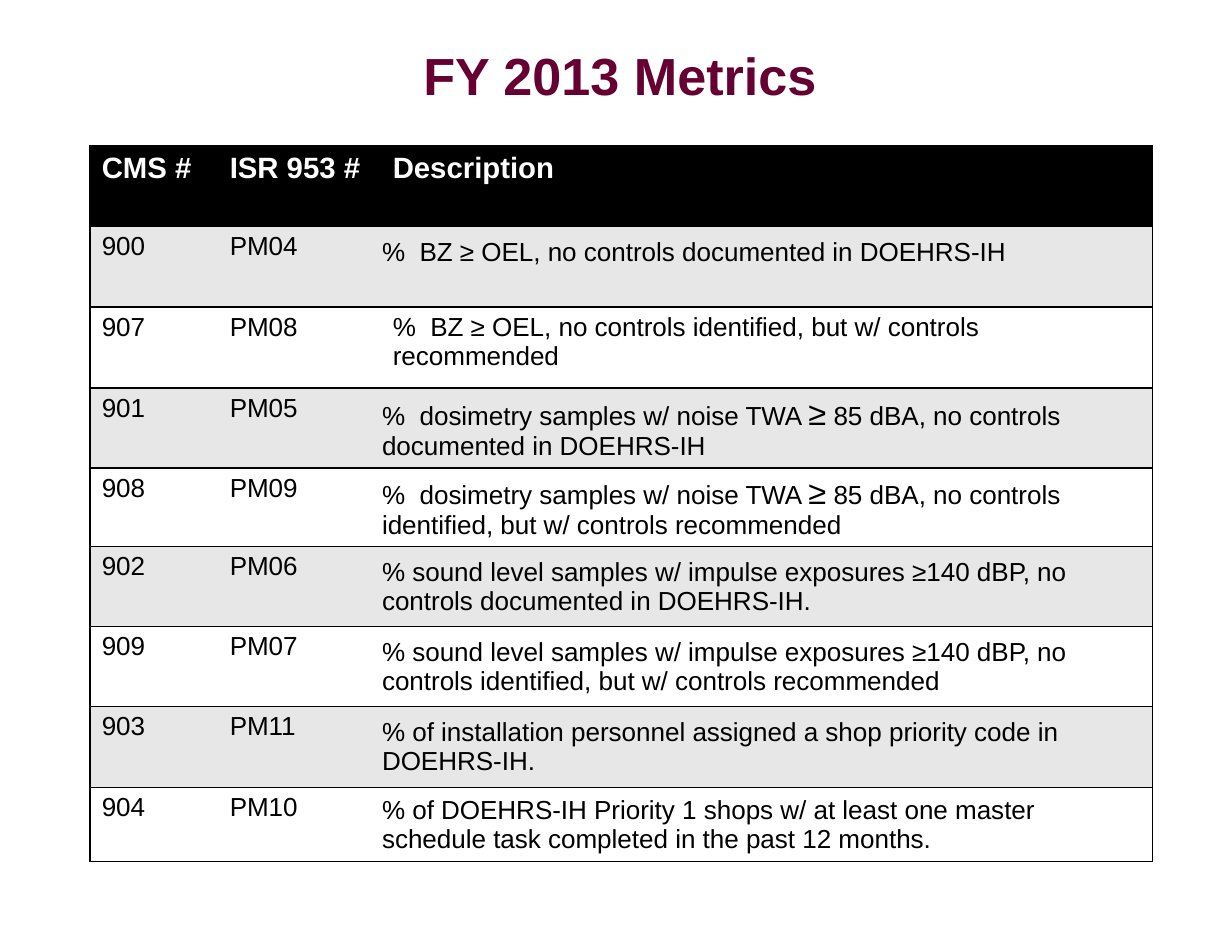
"""Build the FY 2013 Metrics slide: a title above a table of measures."""
from lxml.etree import SubElement
from pptx import Presentation
from pptx.dml.color import RGBColor
from pptx.enum.text import MSO_ANCHOR as Anchor, PP_ALIGN as Align
from pptx.oxml.ns import qn
from pptx.util import Inches, Pt

TITLE = "FY 2013 Metrics"
HEADINGS = ("CMS #", "ISR 953 #", "Description")
METRICS = [
    ("900", "PM04", ("% ", "BZ ≥ OEL, no controls documented in DOEHRS-IH")),
    ("907", "PM08", ("% ", "BZ ≥ OEL, no controls identified, but w/ controls recommended")),
    ("901", "PM05", ("% ", "dosimetry samples w/ noise TWA ", "≥",
                     " 85 dBA, no controls documented in DOEHRS-IH")),
    ("908", "PM09", ("% ", "dosimetry samples w/ noise TWA ", "≥",
                     " 85 dBA, no controls identified, but w/ controls recommended")),
    ("902", "PM06", ("% sound level samples w/ impulse exposures ≥140 dBP, "
                     "no controls documented in DOEHRS-IH.",)),
    ("909", "PM07", ("% sound level samples w/ impulse exposures ≥140 dBP, "
                     "no controls identified, but w/ controls recommended",)),
    ("903", "PM11", ("% of installation personnel assigned a shop priority code in DOEHRS-IH.",)),
    ("904", "PM10", ("% of DOEHRS-IH Priority 1 shops w/ at least one master ", "\n",
                     "schedule task completed in the past 12 months.")),
]

MAROON = RGBColor(0x66, 0x00, 0x33)
BLACK = RGBColor(0x00, 0x00, 0x00)
WHITE = RGBColor(0xFF, 0xFF, 0xFF)
GRAY = RGBColor(0xE7, 0xE7, 0xE7)

PX = 914400 / 117.3
TITLE_BOX = (66, 34, 1108, 81)
TABLE_LEFT, TABLE_TOP = 90, 146
COLUMN_WIDTHS = (128, 163, 771)
ROW_HEIGHTS = (80, 81, 81, 80, 78, 80, 80, 81, 74)
MARGINS = {"margin_left": 1, "margin_right": 1, "margin_top": 1, "margin_bottom": 0}
PADDED_DESCRIPTIONS = ("907",)
RAISED_DESCRIPTIONS = {"900": 29}

TITLE_FONT = {"name": "Arial", "size": Pt(32), "bold": True}
HEADING_FONT = {"name": "Arial", "size": Pt(18), "bold": True}
BODY_FONT = {"name": "Arial", "size": Pt(16), "bold": False}
SIGN_FONT = {**BODY_FONT, "size": Pt(20)}
PERCENT_SPACING = "220"


def px(length):
    return round(length * PX)


def apply(target, values):
    for key, value in values.items():
        setattr(target, key, value)


def add_words(paragraph, pieces, font, color):
    for piece in pieces:
        if piece == "\n":
            paragraph.add_line_break()
            continue
        run = paragraph.add_run()
        run.text = piece
        apply(run.font, SIGN_FONT if piece == "≥" else font)
        run.font.color.rgb = color
        if piece == "% ":
            run._r.get_or_add_rPr().set("spc", PERCENT_SPACING)


def set_borders(cell, visible):
    properties = cell._tc.get_or_add_tcPr()
    for side in "LRTB":
        border = SubElement(properties, qn(f"a:ln{side}"), w=str(Pt(1)))
        if side in visible:
            paint = SubElement(border, qn("a:solidFill"))
            SubElement(paint, qn("a:srgbClr"), val=str(BLACK))
        else:
            SubElement(border, qn("a:noFill"))


def add_title(slide):
    title = slide.shapes.title
    apply(title, dict(zip(("left", "top", "width", "height"), map(px, TITLE_BOX))))
    title.text_frame.vertical_anchor = Anchor.MIDDLE
    heading = title.text_frame.paragraphs[0]
    heading.alignment = Align.CENTER
    add_words(heading, (TITLE,), TITLE_FONT, MAROON)


def add_metrics(slide):
    rows = [HEADINGS] + METRICS
    metrics = slide.shapes.add_table(
        len(rows), len(HEADINGS), px(TABLE_LEFT), px(TABLE_TOP),
        px(sum(COLUMN_WIDTHS)), px(sum(ROW_HEIGHTS))).table
    for column, width in zip(metrics.columns, COLUMN_WIDTHS):
        column.width = px(width)
    for r, (row, height) in enumerate(zip(rows, ROW_HEIGHTS)):
        metrics.rows[r].height = px(height)
        band = BLACK if r == 0 else GRAY if r % 2 else WHITE
        font, color = (BODY_FONT, BLACK) if r else (HEADING_FONT, WHITE)
        for c, content in enumerate(row):
            cell = metrics.cell(r, c)
            set_borders(cell, ("LTB", "TB", "RTB")[c])
            cell.fill.solid()
            cell.fill.fore_color.rgb = band
            pieces = (content,) if isinstance(content, str) else content
            add_words(cell.text_frame.paragraphs[0], pieces, font, color)
            if r and c == 2 and row[0] not in PADDED_DESCRIPTIONS:
                cell.vertical_anchor = Anchor.MIDDLE
                apply(cell, {side: px(gap) for side, gap in MARGINS.items()})
                cell.margin_bottom = px(RAISED_DESCRIPTIONS.get(row[0], 0))


def main():
    deck = Presentation()
    deck.slide_width, deck.slide_height = Inches(10.5), Inches(8)
    slide = deck.slides.add_slide(deck.slide_layouts[5])
    add_title(slide)
    add_metrics(slide)
    deck.save("out.pptx")


if __name__ == "__main__":
    main()
